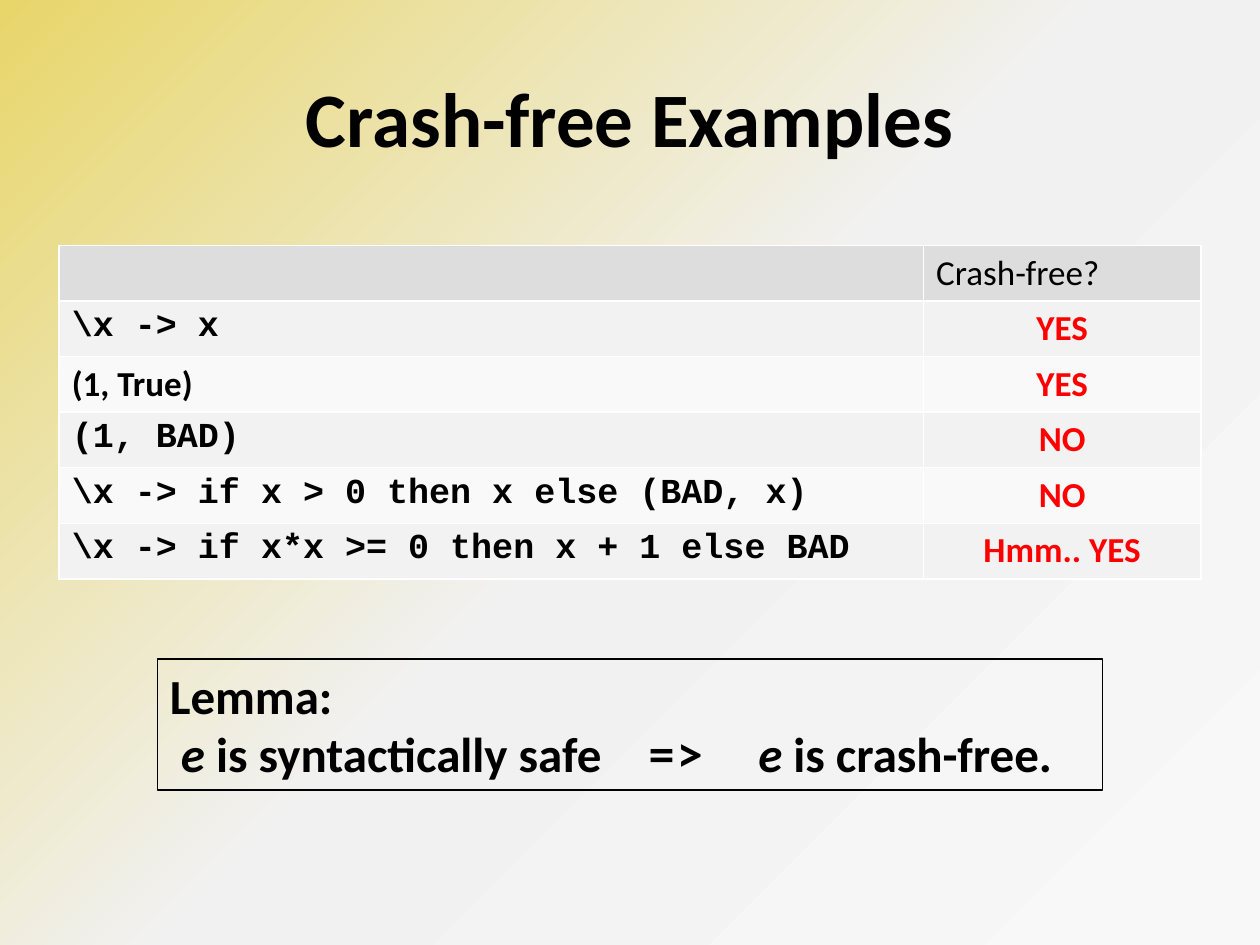
from copy import deepcopy

from lxml.etree import SubElement
from pptx import Presentation
from pptx.dml.color import RGBColor
from pptx.enum.shapes import MSO_SHAPE
from pptx.enum.text import MSO_ANCHOR, PP_ALIGN
from pptx.oxml.ns import qn
from pptx.util import Inches, Pt

COLORS = {
    "ink": "000000", "answer": "FF0000", "border": "FFFFFF",
    "header": "DDDDDD", "odd": "F2F2F2", "even": "F9F9F9",
}
BACKGROUND = [(0, "E8D66A"), (50, "F1F1F1"), (100, "F8F8F8")]
BODY, CODE, SYMBOL = "Calibri", "Courier New", "Lato"
EXAMPLES = [
    (r"\x -> x", CODE, "YES"),
    ("(1, True)", BODY, "YES"),
    ("(1, BAD)", CODE, "NO"),
    (r"\x -> if x > 0 then x else (BAD, x)", CODE, "NO"),
    (r"\x -> if x*x >= 0 then x + 1 else BAD", CODE, "Hmm.. YES"),
]
LEMMA = [
    [("Lemma:", {})],
    [
        (" ", {}), ("e", {"italic": True}), (" is syntactically safe\t", {}),
        ("=>\t", {"name": SYMBOL}), ("e", {"italic": True}), (" is crash-free.", {}),
    ],
]
LEMMA_TABS = [3.79, 4.67]


class SlideBuilder:
    """Holds the text style and the current page, and adds elements to it."""

    def __init__(self, deck):
        self.page = deck.slides.add_slide(deck.slide_layouts[5])
        self.style = {"name": BODY, "size": Pt(20), "bold": True}

    def background(self, stops, angle):
        fill = self.page.background.fill
        fill.gradient()
        fill.gradient_angle = angle
        stop_list = fill.gradient_stops[0]._gs.getparent()
        stop_list.insert(1, deepcopy(stop_list[0]))
        for stop, (position, color) in zip(fill.gradient_stops, stops):
            stop.color.rgb = RGBColor.from_string(color)
            stop.position = position / 100

    def span(self, para, text, color="ink", **changes):
        span = para.add_run()
        span.text = text
        for key, value in (self.style | changes).items():
            setattr(span.font, key, value)
        span.font.color.rgb = RGBColor.from_string(COLORS[color])

    def title(self, text, left, top, width, height):
        box = self.page.shapes.title
        place = {"left": left, "top": top, "width": width, "height": height}
        for key, value in place.items():
            setattr(box, key, Inches(value))
        box.text_frame.vertical_anchor = MSO_ANCHOR.MIDDLE
        para = box.text_frame.paragraphs[0]
        para.alignment = PP_ALIGN.CENTER
        self.span(para, text, size=Pt(44))

    def cell(self, cell, text, fill, align=PP_ALIGN.LEFT, **changes):
        cell.fill.solid()
        cell.fill.fore_color.rgb = RGBColor.from_string(COLORS[fill])
        properties = cell._tc.get_or_add_tcPr()
        for index, side in enumerate(("lnL", "lnR", "lnT", "lnB")):
            line = properties.makeelement(qn(f"a:{side}"), {"w": str(Pt(1))})
            solid = SubElement(line, qn("a:solidFill"))
            SubElement(solid, qn("a:srgbClr"), val=COLORS["border"])
            properties.insert(index, line)
        if text:
            para = cell.text_frame.paragraphs[0]
            para.alignment = align
            self.span(para, text, **changes)

    def examples_table(self, examples, left, top, columns, height):
        frame = self.page.shapes.add_table(
            len(examples) + 1, len(columns), Inches(left), Inches(top),
            Inches(sum(columns)), Inches(height))
        table = frame.table
        table.first_row = table.horz_banding = False
        for column, width in zip(table.columns, columns):
            column.width = Inches(width)
        self.cell(table.cell(0, 0), "", "header")
        self.cell(table.cell(0, 1), "Crash-free?", "header", bold=False)
        for row, (code, font, answer) in enumerate(examples, 1):
            fill = "odd" if row % 2 else "even"
            self.cell(table.cell(row, 0), code, fill, name=font)
            self.cell(table.cell(row, 1), answer, fill, PP_ALIGN.CENTER, color="answer")

    def framed_text(self, lines, tabs, left, top, width, height):
        box = self.page.shapes.add_shape(
            MSO_SHAPE.RECTANGLE, Inches(left), Inches(top), Inches(width), Inches(height))
        box.shadow.inherit = False
        box.fill.background()
        box.line.color.rgb = RGBColor.from_string(COLORS["ink"])
        box.line.width = Pt(0.75)
        frame = box.text_frame
        frame.word_wrap = True
        frame.vertical_anchor = MSO_ANCHOR.TOP
        for index, line in enumerate(lines):
            para = frame.add_paragraph() if index else frame.paragraphs[0]
            para.alignment = PP_ALIGN.LEFT
            tab_list = SubElement(para._p.get_or_add_pPr(), qn("a:tabLst"))
            for tab in tabs:
                SubElement(tab_list, qn("a:tab"), pos=str(Inches(tab)), algn="l")
            for text, changes in line:
                self.span(para, text, size=Pt(28), **changes)


def main():
    deck = Presentation()
    deck.slide_width, deck.slide_height = Inches(10), Inches(7.5)
    slide = SlideBuilder(deck)
    slide.background(BACKGROUND, 315)
    slide.title("Crash-free Examples", 0.5, 0.3, 9, 1.25)
    slide.framed_text(LEMMA, LEMMA_TABS, 1.25, 5.23, 7.5, 1.04)
    slide.examples_table(EXAMPLES, 0.47, 1.95, [6.86, 2.2], 2.6)
    deck.save("out.pptx")


if __name__ == "__main__":
    main()
